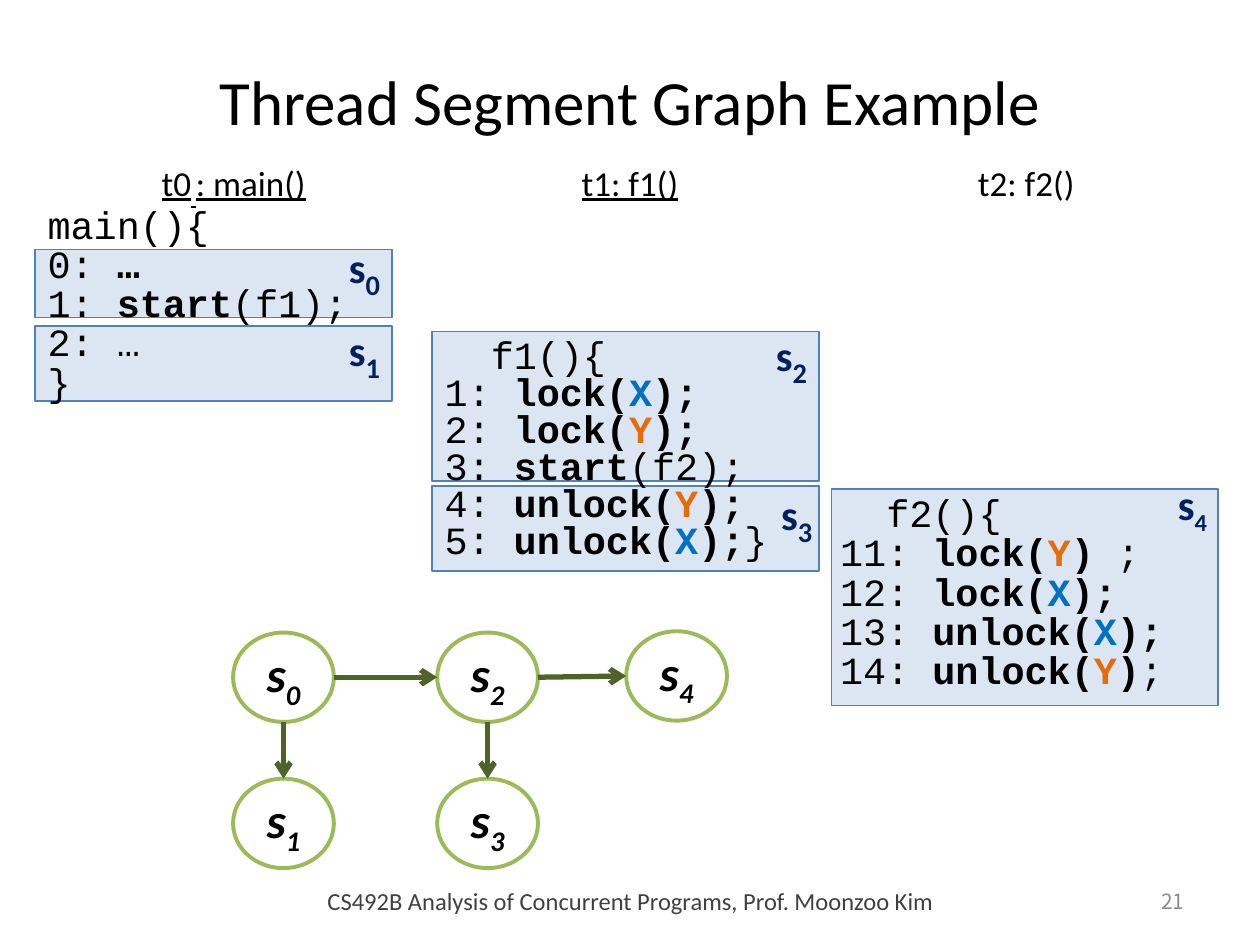
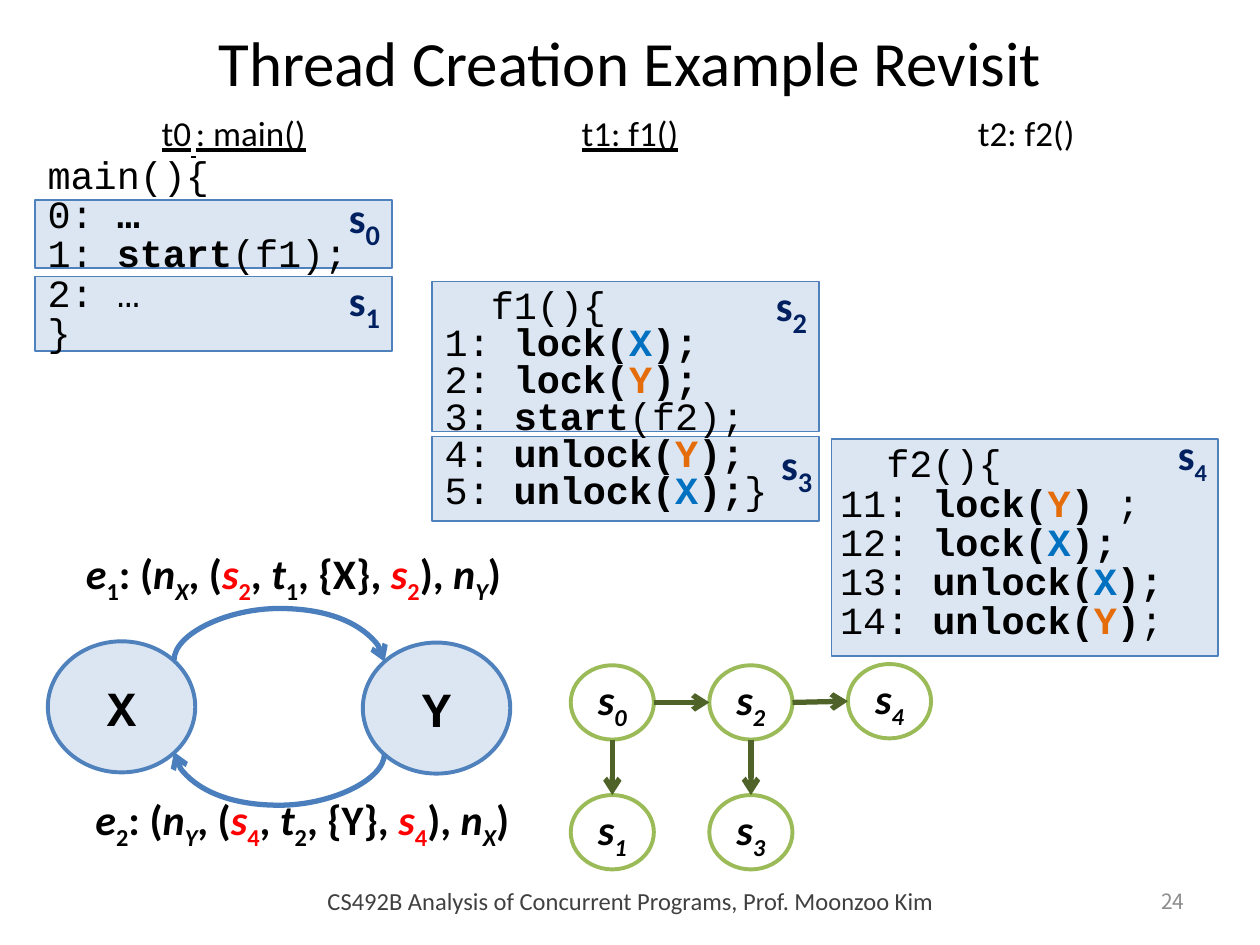
from lxml.etree import SubElement
from pptx import Presentation
from pptx.dml.color import RGBColor
from pptx.enum.shapes import MSO_CONNECTOR as CXN, MSO_SHAPE as SHAPE
from pptx.enum.text import MSO_ANCHOR as ANCHOR, PP_ALIGN as ALIGN
from pptx.oxml.ns import qn
from pptx.util import Emu, Inches, Pt

WIDTH, HEIGHT = Inches(10), Inches(7.5)
COLUMNS, ROWS = 100, 75
SANS, MONO, CJK = "Calibri", "Courier New", "Noto Sans CJK KR"
BLACK, WHITE, NAVY, RED = "000000", "FFFFFF", "002060", "FF0000"
PALE, BLUE, CURVE = "DCE6F2", "4F81BD", "4B7EBC"
GREEN, DARK_GREEN = "9BBB59", "4F6228"
FOOTER = "CS492B Analysis of Concurrent Programs, Prof. Moonzoo Kim"

BOLD = dict(bold=True)
SUB = dict(sub=True)
X = ("X", dict(bold=True, color="0070C0"))
Y = ("Y", dict(bold=True, color="E46C0A"))


def b(text):
    return text, BOLD


MAIN = [["main(){"], ["0:", b(" …")], ["1:", b(" start"), "(f1);"], ["2: …"], ["}"]]
F1 = [
    ["f1(){"],
    ["1:", b(" lock("), X, b(");")],
    ["2:", b(" lock("), Y, b(");")],
    ["3: ", b("start"), "(f2);"],
    ["4:", b(" unlock("), Y, b(");")],
    ["5:", b(" unlock("), X, b(");"), "}"],
]
F2 = [
    ["f2(){"],
    ["11: ", b("lock("), Y, b(")"), " ;"],
    ["12:", b(" lock("), X, b(");")],
    ["13: ", b("unlock("), X, b(");")],
    ["14:", b(" unlock("), Y, b(")"), ";"],
]
HEADINGS = [
    (["t0", (" ", SUB), ": main()"], True),
    (["t1: f1()"], True),
    (["t2: f2()"], False),
]
SEGMENTS = [
    ((0, 7.5, 28.3, 5.4), (23.9, 5.8), 28),
    ((0, 13.6, 28.3, 5.9), (23.9, 12.4), 28),
    ((31.5, 14, 30.7, 11.9), (57.8, 12.8), 28),
    ((31.5, 26.3, 30.7, 6.7), (58.2, 25.4), 28),
    ((63.2, 26.5, 30.7, 17.2), (89.7, 25.2), 24),
]
CODE = [
    (MAIN, (0, 3.7, 37, 23.6), 0.85, False),
    (F1, (31.5, 14.2, 33.1, 25.7), 0.8, True),
    (F2, (62.9, 26.6, 30.4, 17), 0.85, True),
]


def rgb(value):
    return RGBColor.from_string(value)


def col(n):
    return Emu(round(WIDTH * n / COLUMNS))


def row(n):
    return Emu(round(HEIGHT * n / ROWS))


def grid(box):
    x, y, w, h = box
    return col(x), row(y), col(w), row(h)


def move(box, left, top):
    x, y, w, h = box
    return left + x, top + y, w, h


def write(sp, lines, size=20, font=SANS, color=BLACK, bold=False, italic=False,
          underline=False, align=ALIGN.LEFT, anchor=ANCHOR.TOP, spacing=None, wrap=True):
    tf = sp.text_frame
    tf.word_wrap, tf.vertical_anchor = wrap, anchor
    for i, line in enumerate(lines):
        p = tf.paragraphs[0] if i == 0 else tf.add_paragraph()
        p.alignment = align
        if spacing:
            p.line_spacing = spacing
        for part in line:
            text, fmt = (part, {}) if isinstance(part, str) else part
            r = p.add_run()
            r.text = text
            f = r.font
            f.name, f.size = font, Pt(fmt.get("size", size))
            f.bold = fmt.get("bold", bold)
            f.italic = fmt.get("italic", italic)
            f.underline = underline
            f.color.rgb = rgb(fmt.get("color", color))
            if fmt.get("sub"):
                r._r.get_or_add_rPr().set("baseline", "-25000")
    return tf


def label(s, box, lines, **fmt):
    return write(s.shapes.add_textbox(*grid(box)), lines, **fmt)


def shape(s, kind, box, fill, line, width):
    sp = s.shapes.add_shape(kind, *grid(box))
    sp.shadow.inherit = False
    sp.fill.solid()
    sp.fill.fore_color.rgb = rgb(fill)
    sp.line.color.rgb = rgb(line)
    sp.line.width = Pt(width)
    return sp


def node(s, box, runs, fill, line, **fmt):
    sp = shape(s, SHAPE.OVAL, box, fill, line, 2.25)
    write(sp, [runs], bold=True, align=ALIGN.CENTER, anchor=ANCHOR.MIDDLE, wrap=False, **fmt)
    return sp


def arrow(s, kind, ends, start, start_site, end, end_site, color):
    c = s.shapes.add_connector(kind, *ends)
    c.line.color.rgb = rgb(color)
    c.line.width = Pt(3)
    SubElement(c.line._get_or_add_ln(), qn("a:tailEnd"), type="arrow")
    SubElement(c._element.spPr, qn("a:effectLst"))
    links = c._element.nvCxnSpPr.cNvCxnSpPr
    for tag, sp, site in (("a:stCxn", start, start_site), ("a:endCxn", end, end_site)):
        SubElement(links, qn(tag), id=str(sp.shape_id), idx=str(site))
    return c


def arrow_right(s, a, z):
    ends = a.left + a.width, a.top + a.height // 2, z.left, z.top + z.height // 2
    arrow(s, CXN.STRAIGHT, ends, a, 6, z, 2, DARK_GREEN)


def arrow_down(s, a, z):
    ends = a.left + a.width // 2, a.top + a.height, z.left + z.width // 2, z.top
    arrow(s, CXN.STRAIGHT, ends, a, 4, z, 0, DARK_GREEN)


def arc(s, box, start, start_site, end, end_site, turn):
    x, y, w, h = grid(box)
    c = arrow(s, CXN.CURVE, (x, y, x + w, y + h), start, start_site, end, end_site, CURVE)
    xfrm = c._element.spPr.find(qn("a:xfrm"))
    xfrm.set("rot", str(turn * 60000))
    xfrm.set("flipH", "1")
    guides = c._element.spPr.find(qn("a:prstGeom")).get_or_add_avLst()
    SubElement(guides, qn("a:gd"), name="adj1", fmla="val -2885500")


def threads(s, left, top):
    for box, _, _ in SEGMENTS:
        shape(s, SHAPE.RECTANGLE, move(box, left, top), PALE, BLUE, 1)
    for lines, box, spacing, indented in CODE:
        tf = label(s, move(box, left, top), lines, size=22, font=MONO, spacing=spacing)
        if indented:
            tf.paragraphs[0]._p.get_or_add_pPr().set("marL", str(col(3.67)))
    for i, (_, (x, y), sub_size) in enumerate(SEGMENTS):
        runs = ["s", (str(i), dict(bold=True, sub=True, size=sub_size))]
        label(s, (left + x, top + y, 7.5, 5), [runs], size=24, color=NAVY, bold=True)
    for i, (runs, underline) in enumerate(HEADINGS):
        label(s, (left + i * 31.45, top, 31.5, 4.4), [runs],
              underline=underline, align=ALIGN.CENTER)


def segment_graph(s, left, top, w, h, step, drop, far, size):
    places = [(0, 0), (0, drop), (step, 0), (step, drop), (far, -0.1)]
    n = [
        node(s, (left + x, top + y, w, h), ["s", (str(i), SUB)], WHITE, GREEN,
             size=size, italic=True)
        for i, (x, y) in enumerate(places)
    ]
    for a, z in ((0, 2), (2, 4)):
        arrow_right(s, n[a], n[z])
    for a, z in ((0, 1), (2, 3)):
        arrow_down(s, n[a], n[z])


def edge_label(s, box, edge, segment, thread, held, wanted):
    it, low = dict(italic=True), dict(sub=True, italic=True)
    seg = [("s", dict(italic=True, color=RED)), (segment, dict(sub=True, color=RED))]
    runs = [("e", it), (edge, SUB), ": (", ("n", it), (held, low), ", (", *seg, ", ",
            ("t", it), (thread, SUB), f", {{{held}}}, ", *seg, "), ",
            ("n", it), (wanted, low), ")"]
    label(s, box, [runs], size=24, bold=True, align=ALIGN.CENTER)


def lock_graph(s, left, top):
    x, y = (
        node(s, (left + dx, top + dy, 11.7, 10.4), [name], PALE, BLUE, size=28, font=MONO)
        for name, dx, dy in (("X", 1, 7.9), ("Y", 26, 8))
    )
    arc(s, (left + 19.3, top + 1.1, 0.14, 16.7), x, 7, y, 1, 270)
    arc(s, (left + 19.3, top + 8.4, 0.14, 16.7), y, 3, x, 5, 90)
    edge_label(s, (left + 0.7, top + 19.5, 41, 5), "2", "4", "2", "Y", "X")
    edge_label(s, (left, top, 41, 5), "1", "2", "1", "X", "Y")


def base_slide(prs, title, title_top, number):
    s = prs.slides.add_slide(prs.slide_layouts[6])
    middle = dict(anchor=ANCHOR.MIDDLE)
    label(s, (5, title_top, 90, 7.1), [[title]], size=36, align=ALIGN.CENTER, **middle)
    label(s, (84.6, 69.5, 10.4, 4), [[number]], size=12, font=CJK, color="8C8C8C",
          align=ALIGN.RIGHT, **middle)
    label(s, (20.9, 69.5, 58.3, 4), [[FOOTER]], size=14, color="404040",
          align=ALIGN.CENTER, **middle)
    return s


def main():
    prs = Presentation()
    prs.slide_width, prs.slide_height = WIDTH, HEIGHT

    s = base_slide(prs, "Thread Segment Graph Example", 4.4, "21")
    threads(s, 2.8, 12.3)
    segment_graph(s, 18.5, 50.2, 8, 7.1, 16.2, 11.6, 31.2, 28)

    s = base_slide(prs, "Thread Creation Example Revisit", 1.3, "24")
    threads(s, 2.8, 8.35)
    lock_graph(s, 2.8, 43)
    segment_graph(s, 45.3, 52.8, 6.6, 5.9, 11, 10.3, 22, 24)

    prs.save("out.pptx")


if __name__ == "__main__":
    main()
